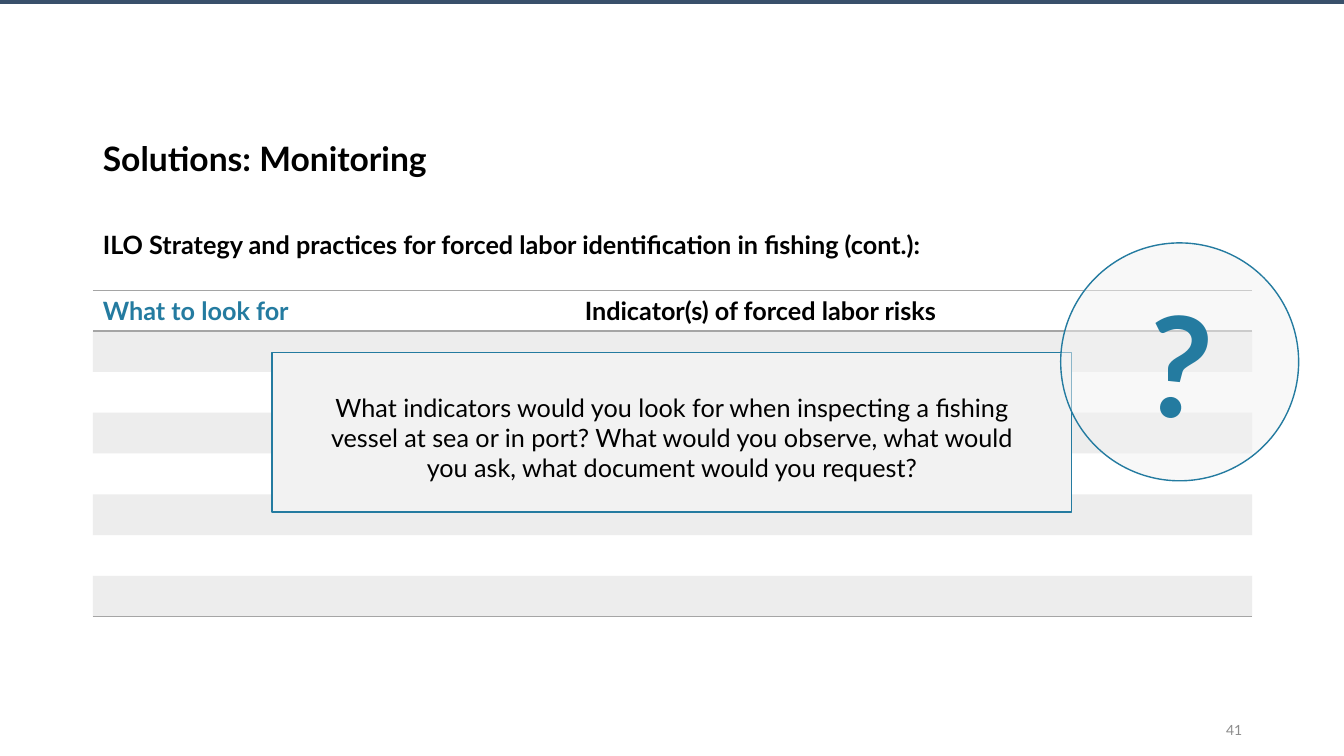
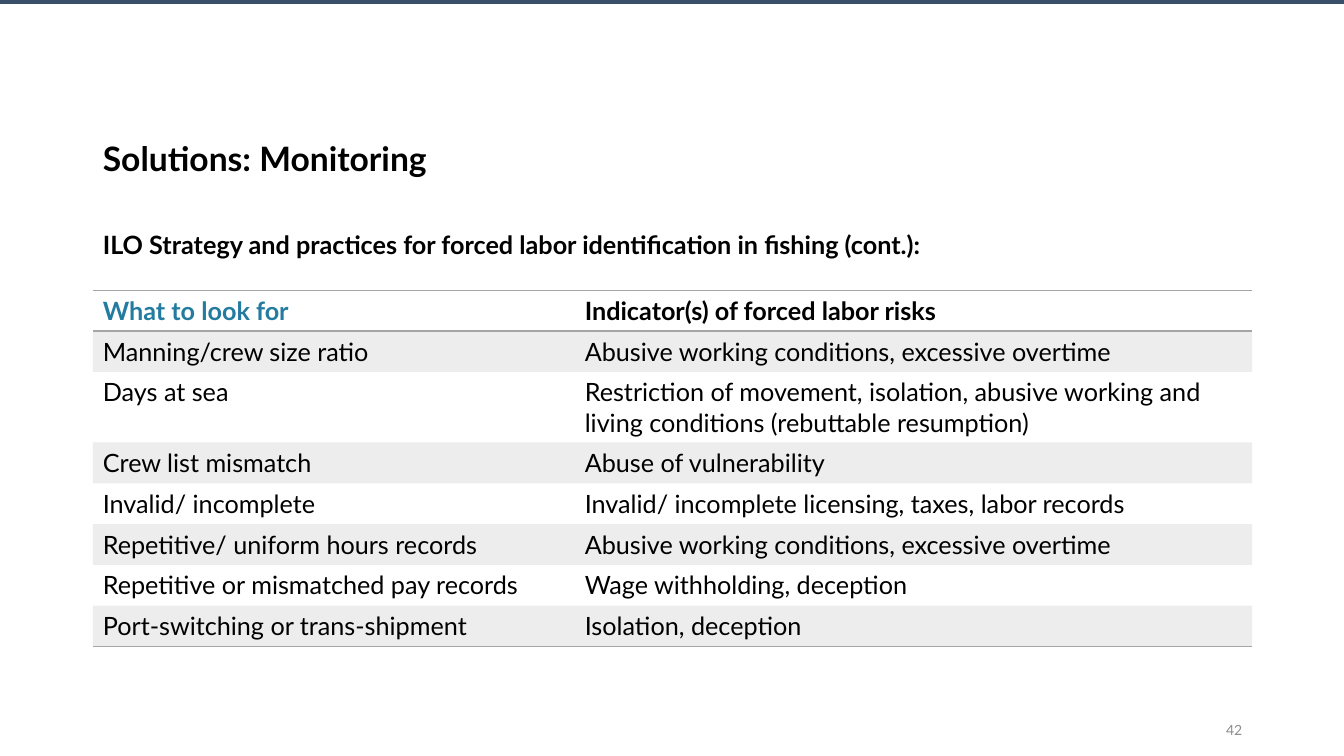
import dataclasses

import pptx
import pptx.dml.color
import pptx.enum.shapes
import pptx.enum.text
import pptx.oxml
import pptx.oxml.ns
import pptx.util

FONT = "Lato"
BLACK, TEAL, NAVY, GREY = "000000", "247BA0", "39506B", "A5A5A5"
PANEL, PAGE_GREY = "F2F2F2", "8C8C8C"
PLAIN_TABLE_STYLE = "{2D5ABB26-0587-4C30-8999-92F81FD0307C}"
ALIGN = pptx.enum.text.PP_ALIGN
ANCHOR = pptx.enum.text.MSO_ANCHOR
SHAPE = pptx.enum.shapes.MSO_SHAPE

TITLE = "Solutions: Monitoring"
SUBTITLE = "ILO Strategy and practices for forced labor identification in fishing (cont.):"
HEADER = ("What to look for", "Indicator(s) of forced labor risks")
QUESTION = (
    "What indicators would you look for when inspecting a fishing vessel at sea or in port? "
    "What would you observe, what would you ask, what document would you request?"
)
ANSWERS = [
    ("Manning/crew size ratio", "Abusive working conditions, excessive overtime"),
    ("Days at sea", "Restriction of movement, isolation, abusive working and "
                    "living conditions (rebuttable resumption)"),
    ("Crew list mismatch", "Abuse of vulnerability"),
    ("Invalid/ incomplete", "Invalid/ incomplete licensing, taxes, labor records"),
    ("Repetitive/ uniform hours records", "Abusive working conditions, excessive overtime"),
    ("Repetitive or mismatched pay records", "Wage withholding, deception"),
    ("Port-switching or trans-shipment", "Isolation, deception"),
]


@dataclasses.dataclass
class Box:
    """A rectangle in inches."""
    left: float
    top: float
    width: float
    height: float

    def region(self, right, down, width, height):
        """Return a box offset from this one's top left corner."""
        return Box(self.left + right, self.top + down, width, height)

    def lengths(self):
        """Return left, top, width and height as lengths."""
        return [pptx.util.Inches(value) for value in dataclasses.astuple(self)]


SLIDE = Box(0, 0, 13.33, 7.5)
CONTENT = SLIDE.region(0.92, 1.27, 11.5, 6.08)
TABLE = CONTENT.region(0, 1.61, CONTENT.width, 3.24)
FIRST_COLUMN = 4.78
TALL_ROW = 0.7


def color(hex_string):
    """Turn a hex string into a colour."""
    return pptx.dml.color.RGBColor.from_string(hex_string)


def paint(fill, hex_string, opacity=100):
    """Give a fill a solid colour with an opacity in percent."""
    fill.solid()
    fill.fore_color.rgb = color(hex_string)
    if opacity < 100:
        solid = fill._xPr.find(pptx.oxml.ns.qn("a:solidFill"))
        alpha = solid[0].makeelement(pptx.oxml.ns.qn("a:alpha"), {"val": str(opacity * 1000)})
        solid[0].append(alpha)


def write(frame, text, size=18, hex_string=BLACK, bold=False, align=ALIGN.LEFT):
    """Write one formatted paragraph into a text frame and return it."""
    frame.text = text
    frame.word_wrap = True
    paragraph = frame.paragraphs[0]
    paragraph.alignment = align
    for run in paragraph.runs:
        run.font.name = FONT
        run.font.size = pptx.util.Pt(size)
        run.font.bold = bold
        run.font.color.rgb = color(hex_string)
    return paragraph


def move(shape, box):
    """Place a shape on a box."""
    shape.left, shape.top, shape.width, shape.height = box.lengths()


def add_panel(slide, kind, box, fill, line=None, opacity=100):
    """Add a flat preset shape."""
    shape = slide.shapes.add_shape(kind, *box.lengths())
    shape.shadow.inherit = False
    paint(shape.fill, fill, opacity)
    if line:
        shape.line.color.rgb = color(line)
        shape.line.width = pptx.util.Pt(1)
    else:
        shape.line.fill.background()
    return shape


def add_base_slide(presentation, number):
    """Add a slide with the shared band, title, subtitle and page number."""
    slide = presentation.slides.add_slide(presentation.slide_layouts[1])
    add_panel(slide, SHAPE.RECTANGLE, SLIDE.region(0, 0, SLIDE.width, 0.04), NAVY)

    title = slide.shapes.title
    move(title, CONTENT.region(0, 0, 9.94, 0.65))
    write(title.text_frame, TITLE, 24, bold=True).line_spacing = 0.9
    title.text_frame.vertical_anchor = ANCHOR.MIDDLE

    body = slide.placeholders[1]
    move(body, CONTENT.region(0, 0.95, CONTENT.width, 4.51))
    paragraph = write(body.text_frame, SUBTITLE, bold=True)
    properties = paragraph._p.get_or_add_pPr()
    properties.set("marL", "0")
    properties.set("indent", "0")
    properties.append(properties.makeelement(pptx.oxml.ns.qn("a:buNone"), {}))
    paragraph.space_before = pptx.util.Pt(0)
    for placeholder in (title, body):
        placeholder.text_frame.auto_size = pptx.enum.text.MSO_AUTO_SIZE.NONE

    page = slide.shapes.add_textbox(*CONTENT.region(10.06, 5.86, 1.44, 0.22).lengths())
    write(page.text_frame, str(number), 10, PAGE_GREY, align=ALIGN.RIGHT)
    page.text_frame.vertical_anchor = ANCHOR.MIDDLE
    return slide


def rule_cell(cell, sides):
    """Draw thin grey rules on the named sides (T, B) of a cell."""
    properties = cell._tc.get_or_add_tcPr()
    for position, side in enumerate(sides):
        properties.insert(position, pptx.oxml.parse_xml(
            f'<a:ln{side} {pptx.oxml.ns.nsdecls("a")} w="12700">'
            f'<a:solidFill><a:srgbClr val="{GREY}"/></a:solidFill></a:ln{side}>'))


def add_indicator_table(slide, box, rows):
    """Add the two-column indicator table with its header and banded rows."""
    records = [HEADER, *rows]
    frame = slide.shapes.add_table(len(records), 2, *box.lengths())
    for style in frame.element.iter(pptx.oxml.ns.qn("a:tableStyleId")):
        style.text = PLAIN_TABLE_STYLE
    table = frame.table
    table.columns[0].width = pptx.util.Inches(FIRST_COLUMN)
    table.columns[1].width = pptx.util.Inches(box.width - FIRST_COLUMN)
    last = len(records) - 1
    for row, record in enumerate(records):
        for column, text in enumerate(record):
            cell = table.cell(row, column)
            if row % 2:
                paint(cell.fill, GREY, 20)
            else:
                cell.fill.background()
            rule_cell(cell, {0: "TB", last: "B"}.get(row, ""))
            if text:
                hex_string = TEAL if row == column == 0 else BLACK
                paragraph = write(cell.text_frame, text, hex_string=hex_string, bold=row == 0)
                paragraph.space_after = pptx.util.Pt(6)
    return table


def add_question(slide, box):
    """Add the question panel with its large question mark."""
    panel = add_panel(slide, SHAPE.RECTANGLE, box, PANEL, TEAL)
    frame = panel.text_frame
    write(frame, QUESTION, align=ALIGN.CENTER)
    frame.vertical_anchor = ANCHOR.TOP
    inset = pptx.util.Inches(0.39)
    frame.margin_left = frame.margin_top = frame.margin_right = frame.margin_bottom = inset

    circle = add_panel(slide, SHAPE.OVAL, box.region(7.82, -1.09, 2.36, 2.36), PANEL, TEAL, 50)
    circle.rotation = 6
    write(circle.text_frame, "?", 100, TEAL, True, ALIGN.CENTER)
    circle.text_frame.vertical_anchor = ANCHOR.MIDDLE


def build_question_slide(presentation):
    """Build the slide that asks for the indicators over an empty table."""
    slide = add_base_slide(presentation, 41)
    add_indicator_table(slide, TABLE, [("", "")] * len(ANSWERS))
    add_question(slide, TABLE.region(1.78, 0.62, 7.93, 1.58))


def build_answer_slide(presentation):
    """Build the slide with the completed table."""
    slide = add_base_slide(presentation, 42)
    table = add_indicator_table(slide, TABLE, ANSWERS)
    table.rows[2].height = pptx.util.Inches(TALL_ROW)


def main():
    """Build and save the presentation."""
    presentation = pptx.Presentation()
    presentation.slide_width, presentation.slide_height = SLIDE.lengths()[2:]
    build_question_slide(presentation)
    build_answer_slide(presentation)
    presentation.save("out.pptx")


if __name__ == "__main__":
    main()
